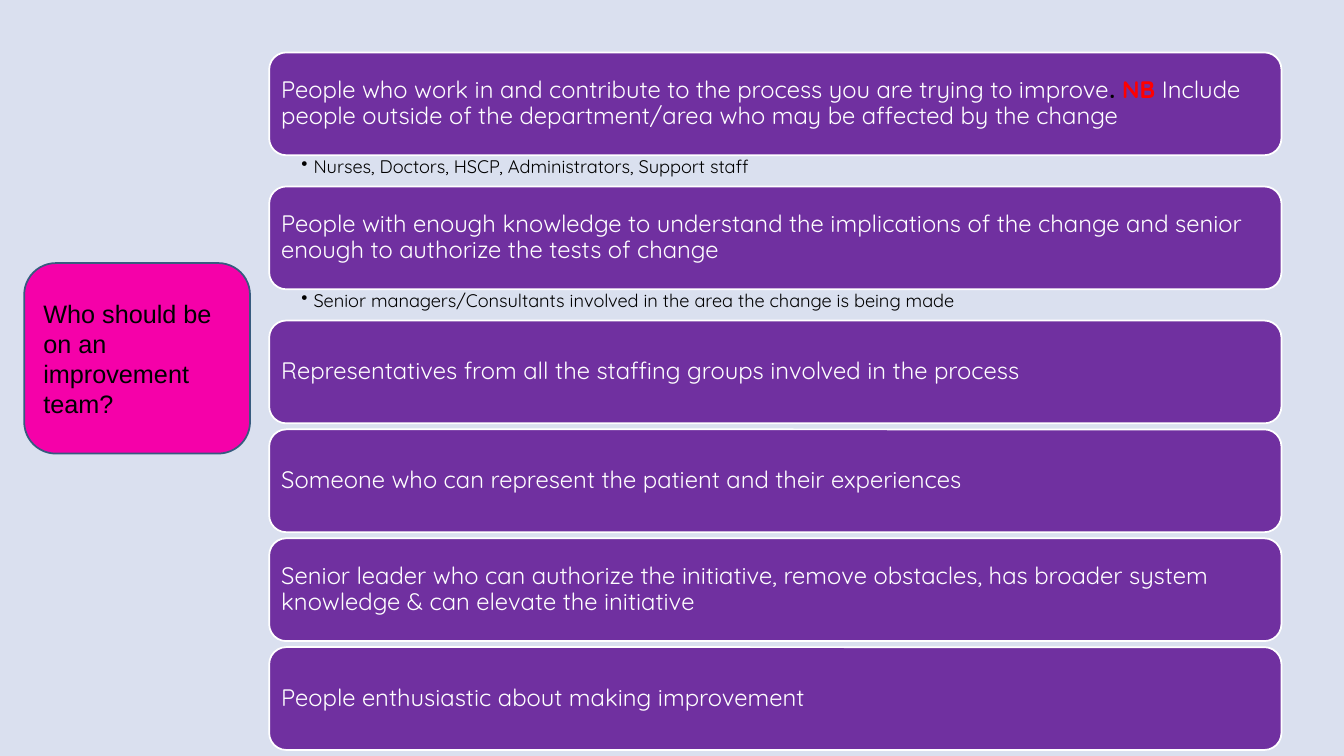
from lxml import etree
from pptx import Presentation
from pptx.dml.color import RGBColor
from pptx.enum.shapes import MSO_SHAPE
from pptx.enum.text import MSO_ANCHOR, PP_ALIGN
from pptx.oxml.ns import qn
from pptx.util import Inches, Pt

ROUNDED = MSO_SHAPE.ROUNDED_RECTANGLE
MIDDLE, TOP = MSO_ANCHOR.MIDDLE, MSO_ANCHOR.TOP
LEFT = PP_ALIGN.LEFT

COLORS = {
    "background": "DAE0EF",
    "bar": "7030A0",
    "white": "FFFFFF",
    "black": "000000",
    "red": "FF0000",
    "question": "F501A9",
    "question_line": "375B7F",
}

QUESTION = "Who should be on an improvement team?"

# Each member: runs of (text, colour, bold), then the examples below the bar
MEMBERS = [
    ([("People who work in and contribute to the process you are trying to improve", "white", False),
      (". ", "black", True),
      ("NB ", "red", True),
      ("Include people outside of the department/area who may be affected by the change", "white", False)],
     "Nurses, Doctors, HSCP, Administrators, Support staff"),
    ([("People with enough knowledge to understand the implications of the change "
       "and senior enough to authorize the tests of change", "white", False)],
     "Senior managers/Consultants involved in the area the change is being made"),
    ([("Representatives from all the staffing groups involved in the process", "white", False)], None),
    ([("Someone who can represent the patient and their experiences", "white", False)], None),
    ([("Senior leader who can authorize the initiative, remove obstacles, "
       "has broader system knowledge & can elevate the initiative", "white", False)], None),
    ([("People enthusiastic about making improvement", "white", False)], None),
]

BAR_LEFT, BAR_WIDTH, BAR_HEIGHT = 2.67, 10.04, 1.02
FIRST_TOP, GAP, EXAMPLES_HEIGHT = 0.52, 0.06, 0.31
BULLET_INDENT = 0.12

# Margins run left, top, right, bottom
BAR_TEXT = {"font": "Quicksand", "size": 17, "spacing": 0.9, "anchor": MIDDLE,
            "margins": (0.07, 0.07, 0.07, 0.07)}
EXAMPLES_TEXT = {"font": "Quicksand", "size": 13, "spacing": 0.9, "anchor": TOP,
                 "margins": (0.32, 0.02, 0.13, 0.02)}
QUESTION_TEXT = {"font": "Arial", "size": 18, "spacing": 1.0, "anchor": MIDDLE,
                 "margins": (0.1, 0.05, 0.1, 0.05)}


def rgb(name):
    return RGBColor.from_string(COLORS[name])


def write(shape, runs, style):
    frame = shape.text_frame
    margins = zip(("left", "top", "right", "bottom"), style["margins"])
    settings = {f"margin_{side}": Inches(size) for side, size in margins}
    settings.update(word_wrap=True, vertical_anchor=style["anchor"])
    for attribute, value in settings.items():
        setattr(frame, attribute, value)
    paragraph = frame.paragraphs[0]
    paragraph.alignment = LEFT
    paragraph.line_spacing = style["spacing"]
    for text, color, bold in runs:
        run = paragraph.add_run()
        run.text = text
        formats = {"name": style["font"], "size": Pt(style["size"]), "bold": bold}
        for attribute, value in formats.items():
            setattr(run.font, attribute, value)
        run.font.color.rgb = rgb(color)
    return paragraph


def add_box(slide, bounds, fill, line, runs, style):
    box = slide.shapes.add_shape(ROUNDED, *map(Inches, bounds))
    box.shadow.inherit = False
    box.fill.solid()
    box.fill.fore_color.rgb = rgb(fill)
    box.line.color.rgb = rgb(line)
    box.line.width = Pt(1.25)
    write(box, runs, style)


def add_examples(slide, top, examples):
    bounds = (BAR_LEFT, top, BAR_WIDTH, EXAMPLES_HEIGHT)
    textbox = slide.shapes.add_textbox(*map(Inches, bounds))
    paragraph = write(textbox, [(examples, "black", False)], EXAMPLES_TEXT)
    properties = paragraph._p.get_or_add_pPr()
    properties.set("marL", str(Inches(BULLET_INDENT)))
    properties.set("indent", str(-Inches(BULLET_INDENT)))
    etree.SubElement(properties, qn("a:buChar")).set("char", "•")


def main():
    presentation = Presentation()
    presentation.slide_width = Inches(13.33)
    presentation.slide_height = Inches(7.5)
    slide = presentation.slides.add_slide(presentation.slide_layouts[6])
    slide.background.fill.solid()
    slide.background.fill.fore_color.rgb = rgb("background")

    top = FIRST_TOP
    for runs, examples in MEMBERS:
        add_box(slide, (BAR_LEFT, top, BAR_WIDTH, BAR_HEIGHT), "bar", "white", runs, BAR_TEXT)
        top += BAR_HEIGHT
        if examples:
            add_examples(slide, top, examples)
            top += EXAMPLES_HEIGHT
        else:
            top += GAP

    add_box(slide, (0.24, 2.61, 2.24, 1.89), "question", "question_line",
            [(QUESTION, "black", False)], QUESTION_TEXT)
    presentation.save("out.pptx")


if __name__ == "__main__":
    main()
